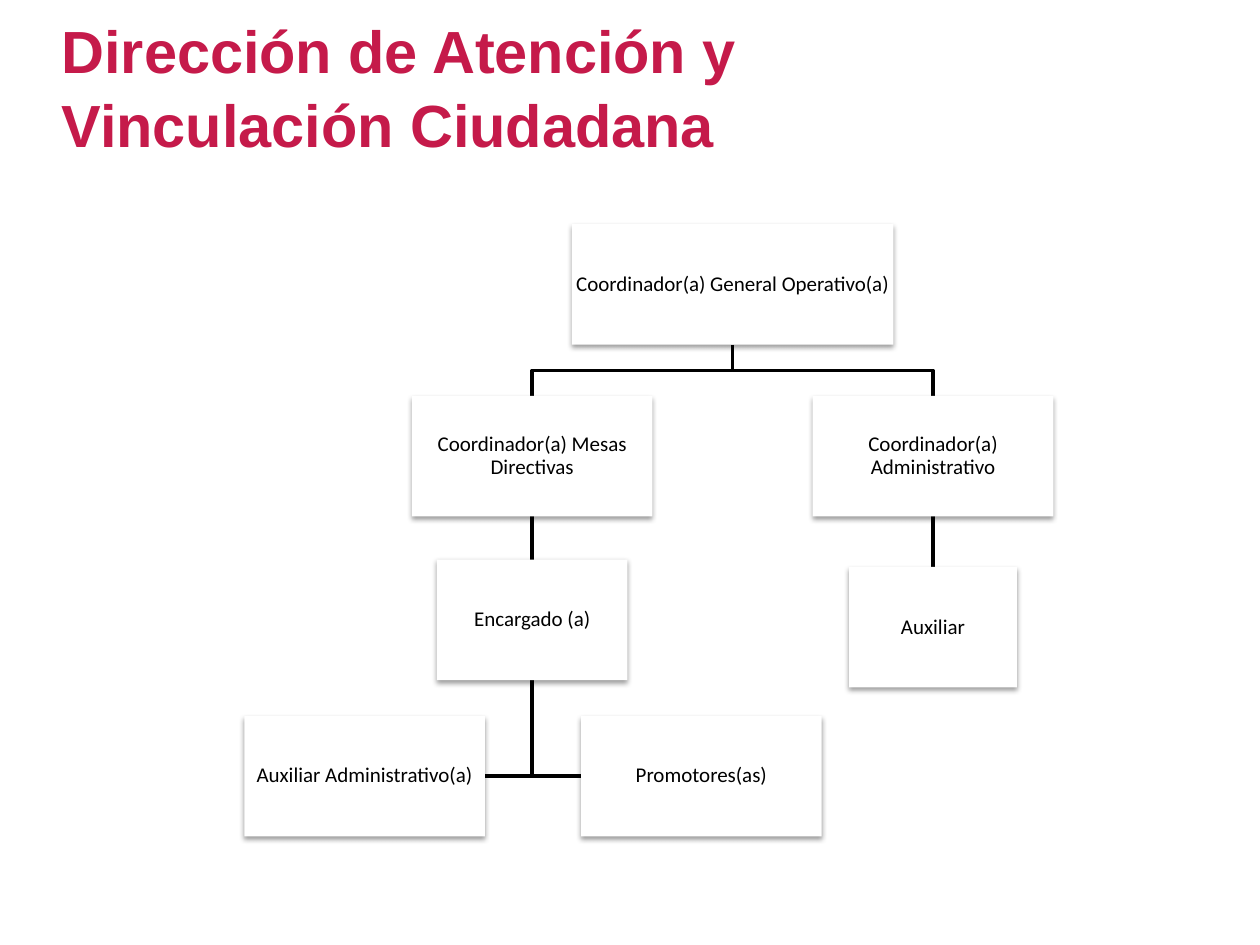
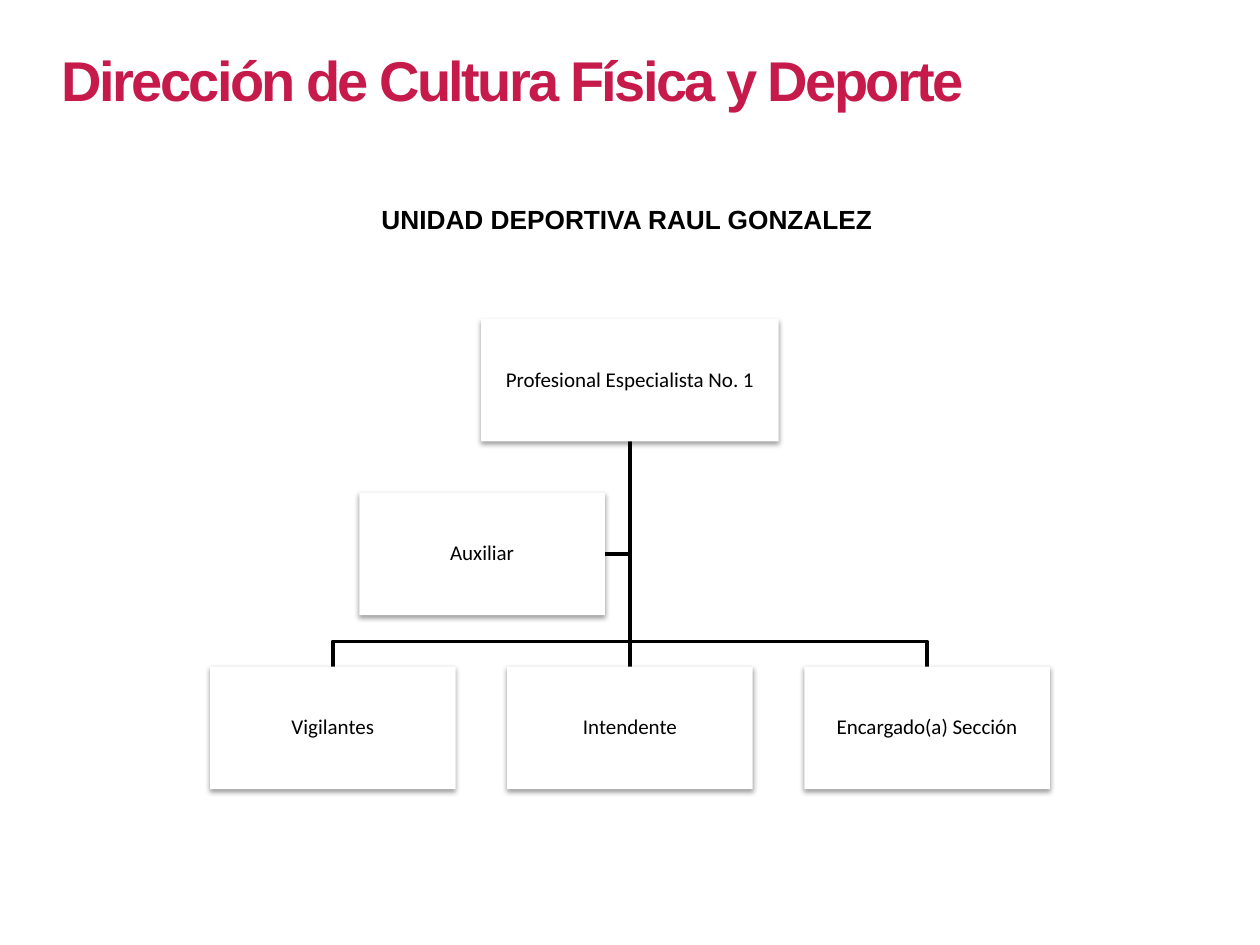
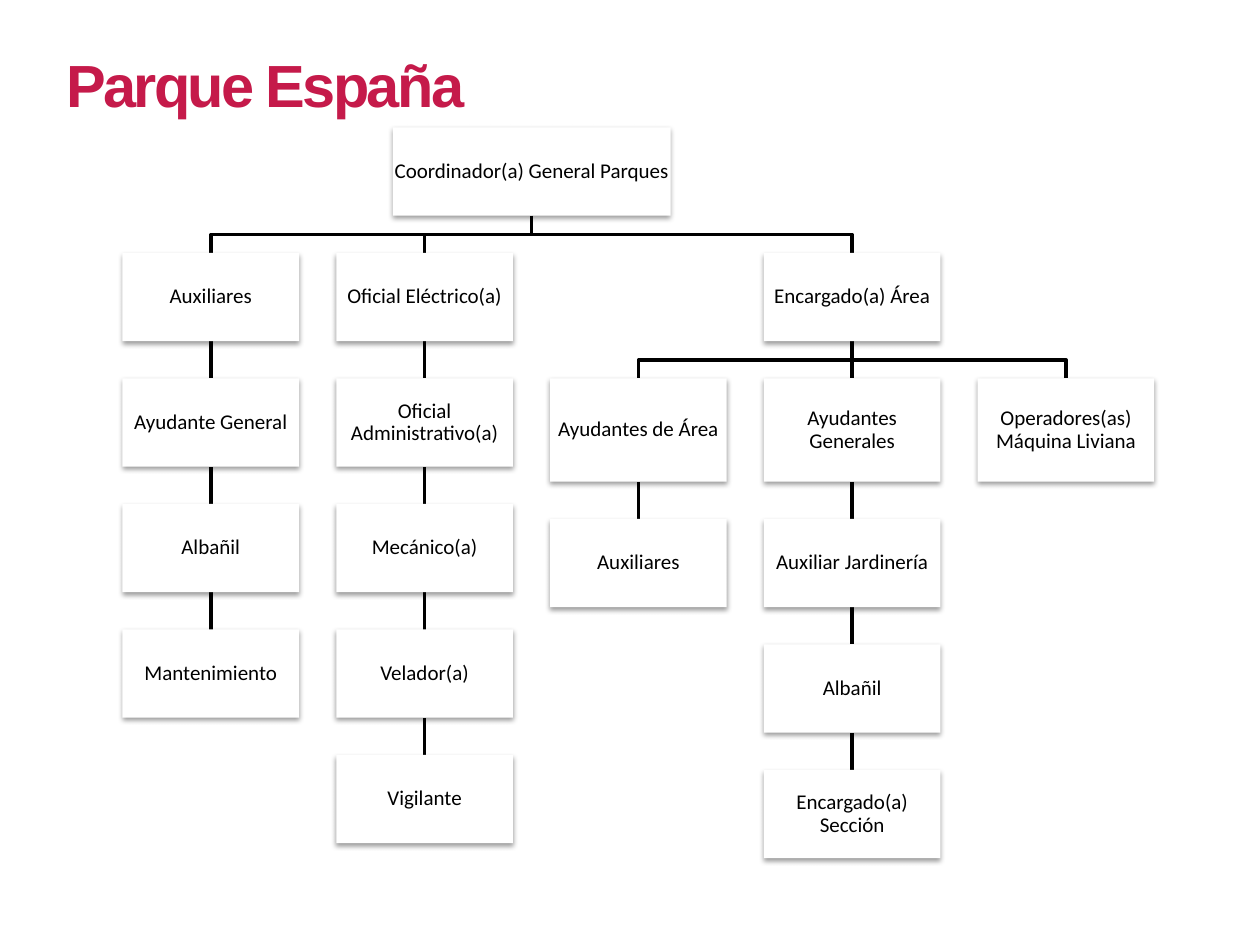
import dataclasses
import typing

import lxml.etree
import pptx
import pptx.dml.color
import pptx.enum.shapes
import pptx.enum.text
import pptx.oxml.ns
import pptx.util

Cm, Pt = pptx.util.Cm, pptx.util.Pt
ALIGN = pptx.enum.text.PP_ALIGN
ANCHOR = pptx.enum.text.MSO_ANCHOR

CRIMSON, BLACK, WHITE = "C51A4A", "000000", "FFFFFF"
TITLE_ONLY = 5
SHADOW = (
    '<a:outerShdw xmlns:a="http://schemas.openxmlformats.org/drawingml/2006/main" '
    'blurRad="39400" dist="20300" dir="5400000" rotWithShape="0">'
    '<a:srgbClr val="000000"><a:alpha val="38000"/></a:srgbClr></a:outerShdw>'
)


@dataclasses.dataclass
class Post:
    """One position of an organisation chart, in centimetres."""
    text: str
    centre: float
    top: float
    width: float
    height: float
    boss: typing.Optional["Post"] = None
    beside: bool = False  # joined at its side instead of its top


def color(code):
    return pptx.dml.color.RGBColor.from_string(code)


def write(box, text, font="Arial", size=12, ink=BLACK, bold=False, tracking=0,
          align=ALIGN.LEFT, anchor=ANCHOR.TOP, spacing=1.0, wrap=True,
          margins=(0.25, 0.13, 0.25, 0.13)):
    """Fill a shape with one formatted paragraph; margins run from left clockwise."""
    frame = box.text_frame
    frame.auto_size = pptx.enum.text.MSO_AUTO_SIZE.NONE
    frame.word_wrap = wrap
    frame.vertical_anchor = anchor
    (frame.margin_left, frame.margin_top,
     frame.margin_right, frame.margin_bottom) = map(Cm, margins)
    para = frame.paragraphs[0]
    para.alignment = align
    para.line_spacing = spacing
    span = para.add_run()
    span.text = text
    span.font.name = font
    span.font.size = Pt(size)
    span.font.bold = bold
    span.font.color.rgb = color(ink)
    if tracking:
        span._r.get_or_add_rPr().set("spc", str(int(tracking * 100)))


# Citizen services
general = Post("Coordinador(a) General Operativo(a)", 14.77, 4.52, 6.48, 2.43)
boards = Post("Coordinador(a) Mesas Directivas", 10.73, 7.98, 4.85, 2.43, general)
office = Post("Coordinador(a) Administrativo", 18.81, 7.98, 4.85, 2.43, general)
citizen_posts = [
    general, boards, office,
    Post("Encargado (a)", 10.73, 11.28, 3.84, 2.43, boards),
    Post("Auxiliar Administrativo(a)", 7.35, 14.43, 4.85, 2.43, boards, True),
    Post("Promotores(as)", 14.14, 14.43, 4.85, 2.43, boards, True),
    Post("Auxiliar", 18.81, 11.43, 3.38, 2.43, office),
]

# Sports
specialist = Post("Profesional Especialista No. 1", 12.7, 6.43, 6, 2.47)
sport_posts = [specialist, Post("Auxiliar", 9.72, 9.93, 4.95, 2.47, specialist, True)]
for column, text in enumerate(["Vigilantes", "Intendente", "Encargado(a) Sección"]):
    sport_posts.append(Post(text, 6.71 + 5.99 * column, 13.44, 4.95, 2.47, specialist))

# Park: each column is a stack of posts, each reporting to the one above
GAP = 0.75
park_head = Post("Coordinador(a) General Parques", 10.72, 2.57, 5.6, 1.78)
park_area = Post("Encargado(a) Área", 17.18, 5.1, 3.56, 1.78, park_head)
park_posts = [park_head, park_area]
stacks = [
    (0, park_head, 1.78, ["Auxiliares", "Ayudante General", "Albañil", "Mantenimiento"]),
    (1, park_head, 1.78, ["Oficial Eléctrico(a)", "Oficial Administrativo(a)",
                          "Mecánico(a)", "Velador(a)", "Vigilante"]),
    (2, park_area, 2.08, ["Ayudantes de Área", "Auxiliares"]),
    (3, park_area, 2.08, ["Ayudantes Generales", "Auxiliar Jardinería", "Albañil",
                          "Encargado(a) Sección"]),
    (4, park_area, 2.08, ["Operadores(as) Máquina Liviana"]),
]
for column, boss, height, texts in stacks:
    for text in texts:
        top = boss.top + boss.height + GAP
        boss = Post(text, 4.25 + 4.31 * column, top, 3.56, height, boss)
        park_posts.append(boss)
        height = 1.78

# Title, its place, size and tracking, rise of the elbows above a post, posts
charts = [
    ("Dirección de Atención y Vinculación Ciudadana",
     (0.99, 0.03, 16.26, 3.18), 34, 0, 0.51, citizen_posts),
    ("Dirección de Cultura Física y Deporte",
     (0.99, 0.66, 19.53, 1.63), 32, -1.5, 0.51, sport_posts),
    ("Parque España", (1.09, 0.71, 8.99, 1.75), 34, -1.5, 0.37, park_posts),
]

deck = pptx.Presentation()
deck.slide_width, deck.slide_height = Cm(25.4), Cm(19.05)

for title, place, size, tracking, rise, posts in charts:
    slide = deck.slides.add_slide(deck.slide_layouts[TITLE_ONLY])
    heading = slide.shapes.title
    heading.left, heading.top, heading.width, heading.height = map(Cm, place)
    write(heading, title, size=size, ink=CRIMSON, bold=True, tracking=tracking,
          spacing=1.04, margins=(0.25, 0.2, 0.25, 0.13))

    if posts is sport_posts:
        caption = slide.shapes.add_textbox(Cm(7.44), Cm(3.96), Cm(10.52), Cm(0.89))
        write(caption, "UNIDAD DEPORTIVA RAUL GONZALEZ", size=15, bold=True, wrap=False)

    for post in posts:
        boss = post.boss
        if boss is None:
            continue
        start = (Cm(boss.centre), Cm(boss.top + boss.height))
        end = (Cm(post.centre), Cm(post.top))
        if start[0] == end[0]:
            link = slide.shapes.add_connector(
                pptx.enum.shapes.MSO_CONNECTOR.STRAIGHT, *start, *end)
            lxml.etree.SubElement(link._element.spPr, pptx.oxml.ns.qn("a:effectLst"))
        else:
            if post.beside:
                toward_boss = 1 if post.centre < boss.centre else -1
                middle = Cm(post.top + post.height / 2)
                side = Cm(post.centre + toward_boss * post.width / 2)
                bends = [(start[0], middle), (side, middle)]
            else:
                level = Cm(post.top - rise)
                bends = [(start[0], level), (end[0], level), end]
            outline = slide.shapes.build_freeform(*start)
            outline.add_line_segments(bends, close=False)
            link = outline.convert_to_shape()
            link.fill.background()
            link.shadow.inherit = False
        link.line.color.rgb = color(BLACK)
        link.line.width = Pt(2)

    for post in posts:
        box = slide.shapes.add_shape(
            pptx.enum.shapes.MSO_SHAPE.RECTANGLE, Cm(post.centre - post.width / 2),
            Cm(post.top), Cm(post.width), Cm(post.height))
        box.fill.solid()
        box.fill.fore_color.rgb = color(WHITE)
        box.line.fill.background()
        box.shadow.inherit = False
        effects = box._element.spPr.find(pptx.oxml.ns.qn("a:effectLst"))
        effects.append(lxml.etree.fromstring(SHADOW))
        write(box, post.text, font="Calibri", align=ALIGN.CENTER, anchor=ANCHOR.MIDDLE,
              spacing=0.9, margins=(0.02, 0.02, 0.02, 0.02))

deck.save("out.pptx")
